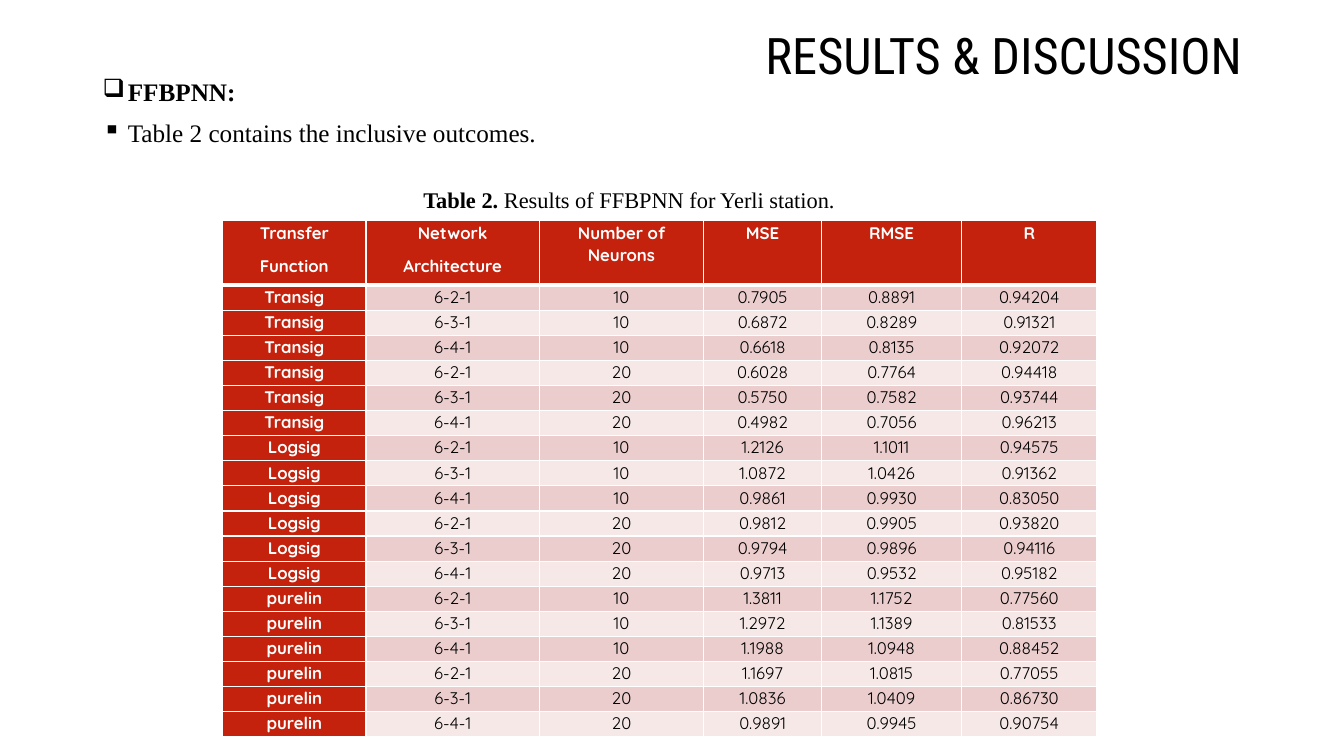
"""Build the FFBPNN results slide."""
from dataclasses import dataclass
from itertools import product
from typing import NamedTuple

from lxml.etree import SubElement
from pptx import Presentation
from pptx.dml.color import RGBColor
from pptx.enum.text import MSO_ANCHOR, PP_ALIGN
from pptx.oxml.ns import qn
from pptx.slide import Slide
from pptx.table import _Cell
from pptx.text.text import TextFrame, _Paragraph
from pptx.util import Inches, Pt


@dataclass(frozen=True)
class Theme:
    """Colours, fonts and type sizes of the slide."""
    ink: str = "000000"
    paper: str = "FFFFFF"
    accent: str = "C4220D"
    bands: tuple[str, str] = ("EACDCC", "F5E8E7")
    title_font: str = "Roboto Condensed"
    body_font: str = "Times New Roman"
    table_font: str = "Quicksand"
    title_size: float = 36
    body_size: float = 18
    caption_size: float = 16
    table_size: float = 12
    grid_line: float = 1
    header_line: float = 3


class Box(NamedTuple):
    """Place and size in inches."""
    left: float
    top: float
    width: float
    height: float


class Point(NamedTuple):
    """One bulleted line."""
    bullet: str
    text: str
    bold: bool
    space_before: float


class Score(NamedTuple):
    """Outcome of one trained network."""
    mse: str
    rmse: str
    r: str


THEME = Theme()
TITLE_BOX = Box(0.92, 0.19, 11.5, 0.78)
POINTS_BOX = Box(0.92, 0.74, 11.5, 1)
CAPTION_BOX = Box(3.24, 1.79, 6, 0.37)
TABLE_BOX = Box(2.21, 2.19, 8.67, 5.12)
COLUMN_WIDTHS = (1.42, 1.72, 1.63, 1.17, 1.39, 1.34)
HEADER_HEIGHT = 0.64
POINTS = (
    Point("❑", "FFBPNN:", True, 0),
    Point("▪", "Table 2 contains the inclusive outcomes.", False, 10),
)
HEADINGS = ("Transfer\nFunction", "Network\nArchitecture", "Number of Neurons",
            "MSE", "RMSE", "R")
NEURONS = ("10", "20")
ARCHITECTURES = ("6-2-1", "6-3-1", "6-4-1")
SCORES = {
    "Transig": (
        Score("0.7905", "0.8891", "0.94204"), Score("0.6872", "0.8289", "0.91321"),
        Score("0.6618", "0.8135", "0.92072"), Score("0.6028", "0.7764", "0.94418"),
        Score("0.5750", "0.7582", "0.93744"), Score("0.4982", "0.7056", "0.96213"),
    ),
    "Logsig": (
        Score("1.2126", "1.1011", "0.94575"), Score("1.0872", "1.0426", "0.91362"),
        Score("0.9861", "0.9930", "0.83050"), Score("0.9812", "0.9905", "0.93820"),
        Score("0.9794", "0.9896", "0.94116"), Score("0.9713", "0.9532", "0.95182"),
    ),
    "purelin": (
        Score("1.3811", "1.1752", "0.77560"), Score("1.2972", "1.1389", "0.81533"),
        Score("1.1988", "1.0948", "0.88452"), Score("1.1697", "1.0815", "0.77055"),
        Score("1.0836", "1.0409", "0.86730"), Score("0.9891", "0.9945", "0.90754"),
    ),
}


def write(paragraph: _Paragraph, text: str, *, font: str, size: float,
          color: str = THEME.ink, bold: bool = False) -> None:
    """Append formatted text to a paragraph."""
    run = paragraph.add_run()
    run.text = text
    run.font.name = font
    run.font.size = Pt(size)
    run.font.bold = bold
    run.font.color.rgb = RGBColor.from_string(color)


def add_frame(slide: Slide, box: Box, anchor: MSO_ANCHOR) -> TextFrame:
    """Add a wrapping text box and return its frame."""
    frame = slide.shapes.add_textbox(*map(Inches, box)).text_frame
    frame.word_wrap = True
    frame.vertical_anchor = anchor
    return frame


def next_paragraph(frame: TextFrame, index: int) -> _Paragraph:
    """Return the first paragraph or add a further one."""
    return frame.add_paragraph() if index else frame.paragraphs[0]


def add_title(slide: Slide) -> None:
    """Add the slide heading."""
    heading = add_frame(slide, TITLE_BOX, MSO_ANCHOR.MIDDLE).paragraphs[0]
    heading.alignment = PP_ALIGN.RIGHT
    heading.line_spacing = 0.9
    write(heading, "RESULTS & DISCUSSION", font=THEME.title_font, size=THEME.title_size)


def add_points(slide: Slide) -> None:
    """Add the bulleted lines."""
    frame = add_frame(slide, POINTS_BOX, MSO_ANCHOR.TOP)
    for index, point in enumerate(POINTS):
        line = next_paragraph(frame, index)
        properties = line._p.get_or_add_pPr()
        properties.set("marL", str(Inches(0.25)))
        properties.set("indent", str(Inches(-0.25)))
        SubElement(properties, qn("a:buChar"), char=point.bullet)
        line.line_spacing = 0.9
        line.space_before = Pt(point.space_before)
        write(line, point.text, font=THEME.body_font, size=THEME.body_size, bold=point.bold)


def add_caption(slide: Slide) -> None:
    """Add the table caption."""
    caption = add_frame(slide, CAPTION_BOX, MSO_ANCHOR.MIDDLE).paragraphs[0]
    caption.alignment = PP_ALIGN.CENTER
    for text, bold in (("Table 2. ", True), ("Results of FFBPNN for Yerli station.", False)):
        write(caption, text, font=THEME.body_font, size=THEME.caption_size, bold=bold)


def add_borders(cell: _Cell, top: float, bottom: float) -> None:
    """Draw the four sides of a cell, widths in points."""
    properties = cell._tc.get_or_add_tcPr()
    sides = {"lnL": THEME.grid_line, "lnR": THEME.grid_line, "lnT": top, "lnB": bottom}
    for side, width in sides.items():
        line = SubElement(properties, qn(f"a:{side}"), w=str(Pt(width)))
        fill = SubElement(line, qn("a:solidFill"))
        SubElement(fill, qn("a:srgbClr"), val=THEME.paper)


def fill_cell(cell: _Cell, text: str, row: int, column: int) -> None:
    """Style a table cell by its position and write its text."""
    is_heading = row == 0 or column == 0
    add_borders(cell,
                top=THEME.header_line if row == 1 else THEME.grid_line,
                bottom=THEME.header_line if row == 0 else THEME.grid_line)
    cell.fill.solid()
    cell.fill.fore_color.rgb = RGBColor.from_string(
        THEME.accent if is_heading else THEME.bands[(row - 1) % 2])
    cell.margin_left = cell.margin_right = Inches(0.07)
    cell.margin_top = cell.margin_bottom = 0
    for index, words in enumerate(text.split("\n")):
        line = next_paragraph(cell.text_frame, index)
        line.alignment = PP_ALIGN.CENTER
        line.line_spacing = 1.07
        line.space_after = Pt(8)
        write(line, words, font=THEME.table_font, size=THEME.table_size,
              color=THEME.paper if is_heading else THEME.ink, bold=is_heading)


def add_results(slide: Slide) -> None:
    """Add the table of network results."""
    records = [HEADINGS]
    for function, scores in SCORES.items():
        for (neurons, architecture), score in zip(product(NEURONS, ARCHITECTURES), scores):
            records.append((function, architecture, neurons, *score))
    results = slide.shapes.add_table(
        len(records), len(HEADINGS), *map(Inches, TABLE_BOX)).table
    for column, width in zip(results.columns, COLUMN_WIDTHS):
        column.width = Inches(width)
    record_height = (TABLE_BOX.height - HEADER_HEIGHT) / (len(records) - 1)
    for row, record in enumerate(records):
        results.rows[row].height = Inches(record_height if row else HEADER_HEIGHT)
        for column, text in enumerate(record):
            fill_cell(results.cell(row, column), text, row, column)


def main() -> None:
    """Build and save the presentation."""
    presentation = Presentation()
    presentation.slide_width = Inches(13.33)
    presentation.slide_height = Inches(7.5)
    slide = presentation.slides.add_slide(presentation.slide_layouts[6])
    add_title(slide)
    add_points(slide)
    add_results(slide)
    add_caption(slide)
    presentation.save("out.pptx")


if __name__ == "__main__":
    main()
